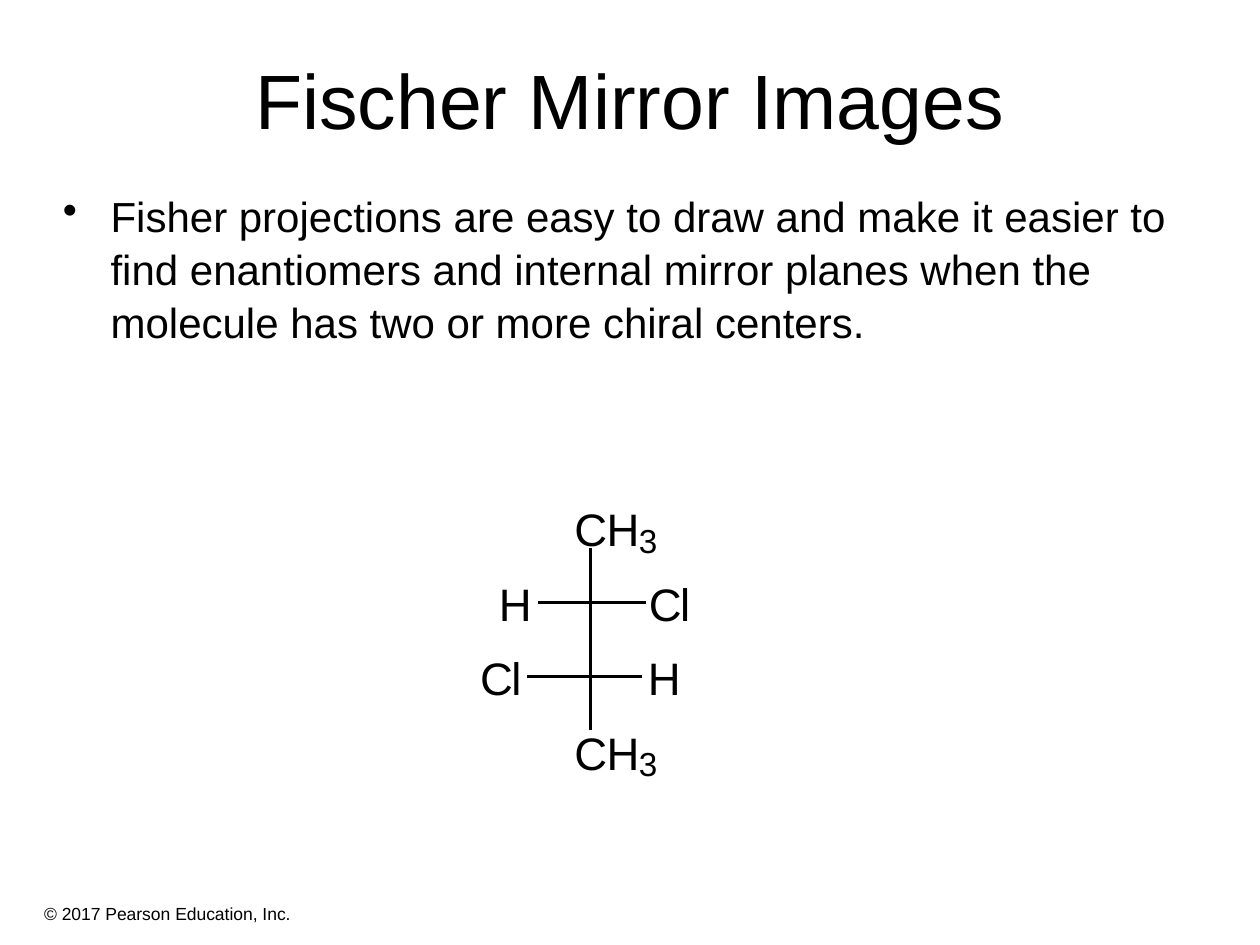
from lxml import etree
from pptx import Presentation
from pptx.dml.color import RGBColor
from pptx.enum import shapes, text
from pptx.oxml import ns
from pptx.util import Cm, Pt

BLACK = RGBColor(0, 0, 0)
FONT = "Arial"

presentation = Presentation()
presentation.slide_width = Cm(25.4)
presentation.slide_height = Cm(19.05)
slide = presentation.slides.add_slide(presentation.slide_layouts[6])


def add_text(content, left, top, width, height, size, wrap=True, insets=(0, 0)):
    box = slide.shapes.add_textbox(Cm(left), Cm(top), Cm(width), Cm(height))
    frame = box.text_frame
    frame.word_wrap = wrap
    frame.margin_left = frame.margin_right = Cm(insets[0])
    frame.margin_top = Cm(insets[1])
    frame.margin_bottom = 0
    frame.vertical_anchor = text.MSO_ANCHOR.TOP
    frame.text = content
    paragraph = frame.paragraphs[0]
    for run in paragraph.runs:
        run.font.name = FONT
        run.font.size = Pt(size)
        run.font.color.rgb = BLACK
    return paragraph


add_text("© 2017 Pearson Education, Inc.", 0.89, 18.21, 14.99, 0.51, 10)

title = add_text("Fischer Mirror Images", 1.27, 0.76, 22.86, 3.91, 44, insets=(0.25, 0.3))
title.alignment = text.PP_ALIGN.CENTER

body = add_text(
    "Fisher projections are easy to draw and make it easier to find enantiomers "
    "and internal mirror planes when the molecule has two or more chiral centers.",
    1.02, 3.61, 24, 4.57, 24, insets=(0.25, 0.18),
)
body.line_spacing = 1.05
properties = body._p.get_or_add_pPr()
properties.set("marL", str(Cm(0.96)))
properties.set("indent", str(-Cm(0.96)))
bullet = etree.SubElement(properties, ns.qn("a:buChar"))
bullet.set("char", "•")

ROW_TOP = 10.11
ROW_PITCH = 1.5
ATOM_WIDTH = 0.65
atoms = [
    ("CH3", 11.58, 0),
    ("H", 10.06, 1),
    ("Cl", 13.08, 1),
    ("Cl", 9.68, 2),
    ("H", 13.06, 2),
    ("CH3", 11.58, 3),
]
glyphs = {
    "C": (0, 0, ATOM_WIDTH, 1.09, 26),
    "H": (ATOM_WIDTH, 0, ATOM_WIDTH, 1.09, 26),
    "l": (0.63, 0, 0.2, 1.09, 26),
    "3": (2 * ATOM_WIDTH, 0.37, 0.38, 0.81, 19),
}
for label, left, row in atoms:
    for letter in label:
        shift, drop, width, height, size = glyphs[letter]
        if label == "H":
            shift = 0
        add_text(letter, left + shift, ROW_TOP + row * ROW_PITCH + drop, width, height, size, wrap=False)

AXIS = 11.91
UPPER = 12.14
LOWER = UPPER + ROW_PITCH
bonds = [
    (AXIS, 11.05, AXIS, UPPER),
    (AXIS, UPPER, 10.85, UPPER),
    (AXIS, UPPER, 13.03, UPPER),
    (AXIS, UPPER, AXIS, LOWER),
    (AXIS, LOWER, 10.62, LOWER),
    (AXIS, LOWER, 12.95, LOWER),
    (AXIS, LOWER, AXIS, 14.71),
]
for bond in bonds:
    connector = slide.shapes.add_connector(
        shapes.MSO_CONNECTOR.STRAIGHT, *[Cm(value) for value in bond]
    )
    connector.line.color.rgb = BLACK
    connector.line.width = Pt(1.63)
    etree.SubElement(connector._element.spPr, ns.qn("a:effectLst"))

presentation.save("out.pptx")
